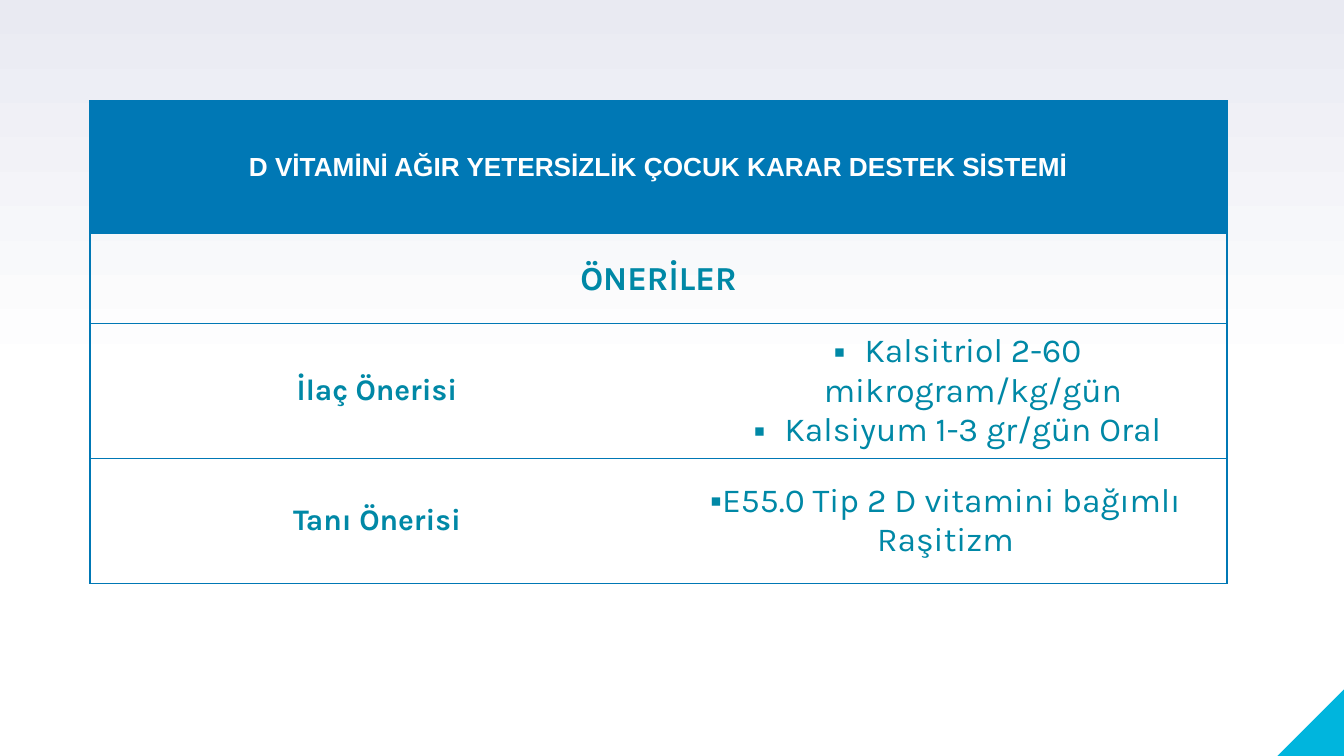
"""Build the vitamin D decision support slide with its recommendation table."""
from lxml import etree
from pptx import Presentation
from pptx import util as u
from pptx.dml.color import RGBColor
from pptx.enum import shapes, text
from pptx.oxml import ns

BLUE, TEAL, WHITE = "0078B5", "0088A6", "FFFFFF"


def rgb(value):
    return RGBColor.from_string(value)


def add(parent, tag, **attrs):
    return etree.SubElement(parent, ns.qn(tag), attrs)


prs = Presentation()
prs.slide_width = u.Inches(10)
prs.slide_height = prs.slide_width * 9 // 16
s = prs.slides.add_slide(prs.slide_layouts[6])

fill = s.background.fill
fill.gradient()
fill.gradient_angle = 90
for stop, (position, color) in zip(fill.gradient_stops, [(0.5, WHITE), (1, "E9EAF2")]):
    stop.position = position
    stop.color.rgb = rgb(color)

sp = s.shapes.add_shape(shapes.MSO_SHAPE.RIGHT_TRIANGLE, u.Inches(9.5), u.Inches(5.12),
                        u.Inches(0.51), u.Inches(0.51))
sp.shadow.inherit = False
sp.fill.solid()
sp.fill.fore_color.rgb = rgb("00B5DD")
sp.line.fill.background()
sp._element.spPr.xfrm.set("flipH", "1")

table = s.shapes.add_table(4, 2, u.Inches(0.67), u.Inches(0.75),
                           u.Inches(8.46), u.Inches(3.51)).table
table.first_row = table.horz_banding = False
for column, width in zip(table.columns, [4.27, 4.19]):
    column.width = u.Inches(width)
for row, height in zip(table.rows, [0.99, 0.67, 0.92, 0.93]):
    row.height = u.Inches(height)

for i, row in enumerate(table.rows):
    for j, cell in enumerate(row.cells):
        tcPr = cell._tc.get_or_add_tcPr()
        merged = i < 2
        visible = {"L": j == 0, "R": j == 1 or merged, "T": True, "B": True}
        for side, shown in visible.items():
            ln = add(tcPr, f"a:ln{side}", w=str(u.Pt(0.75)))
            if shown:
                add(add(ln, "a:solidFill"), "a:srgbClr", val=BLUE)
            else:
                add(ln, "a:noFill")
        if i == 0:
            cell.fill.solid()
            cell.fill.fore_color.rgb = rgb(BLUE)
        else:
            cell.fill.background()
for i in range(2):
    table.cell(i, 0).merge(table.cell(i, 1))

label = {"name": "Karla", "size": u.Pt(16), "bold": True}
item = {"name": "Karla", "size": u.Pt(18), "bold": False}
contents = [
    (0, 0, ["D VİTAMİNİ AĞIR YETERSİZLİK ÇOCUK KARAR DESTEK SİSTEMİ"],
     {"name": "Arial", "size": u.Pt(14), "bold": True}, WHITE, None),
    (1, 0, ["ÖNERİLER"], {**item, "bold": True}, TEAL, None),
    (2, 0, ["İlaç Önerisi"], label, TEAL, None),
    (2, 1, ["Kalsitriol 2-60 mikrogram/kg/gün", "Kalsiyum 1-3 gr/gün Oral"],
     item, TEAL, (0.41, -0.23)),
    (3, 0, ["Tanı Önerisi"], label, TEAL, None),
    (3, 1, ["E55.0 Tip 2 D vitamini bağımlı Raşitizm"], item, TEAL, (0, 0)),
]
for i, j, lines, font, color, bullet in contents:
    cell = table.cell(i, j)
    cell.vertical_anchor = text.MSO_ANCHOR.MIDDLE
    cell.margin_top = cell.margin_bottom = u.Inches(0.06)
    tf = cell.text_frame
    for n, line in enumerate(lines):
        p = tf.add_paragraph() if n else tf.paragraphs[0]
        p.alignment = text.PP_ALIGN.CENTER
        if bullet:
            pPr = p._p.get_or_add_pPr()
            for name, inches in zip(("marL", "indent"), bullet):
                pPr.set(name, str(u.Inches(inches)))
            add(add(pPr, "a:buClr"), "a:srgbClr", val=TEAL)
            add(pPr, "a:buFont", typeface="Arial")
            add(pPr, "a:buChar", char="▪")
        r = p.add_run()
        r.text = line
        for name, value in font.items():
            setattr(r.font, name, value)
        r.font.color.rgb = rgb(color)

prs.save("out.pptx")
